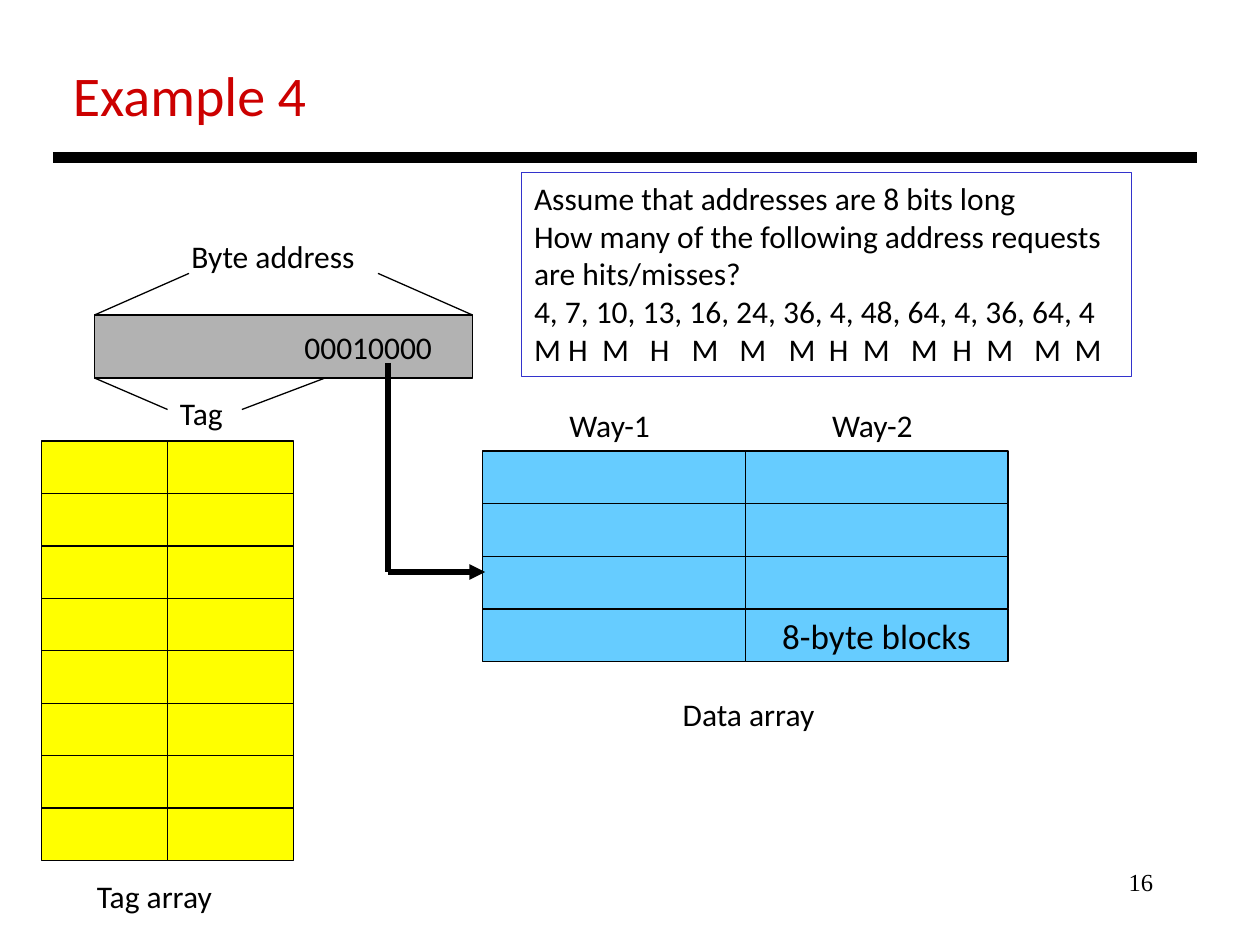
from lxml.etree import SubElement
from pptx import Presentation
from pptx.dml.color import RGBColor
from pptx.enum.shapes import MSO_CONNECTOR, MSO_SHAPE
from pptx.enum.text import MSO_ANCHOR, PP_ALIGN
from pptx.oxml.ns import qn
from pptx.util import Inches, Pt

BLACK, RED, BLUE = "000000", "CC0000", "3333CC"
GRAY, YELLOW, SKY = "B2B2B2", "FFFF00", "66CCFF"
QUIZ = [
    "Assume that addresses are 8 bits long",
    "How many of the following address requests",
    "are hits/misses?",
    "4, 7, 10, 13, 16, 24, 36, 4, 48, 64, 4, 36, 64, 4",
    "\t".join("MHMHMMMHMMHMMM"),
]
STOPS = [0.27, 0.54, 0.92, 1.25, 1.63, 2.02, 2.34, 2.61, 2.99, 3.32, 3.59, 3.97, 4.29]


def color(code):
    return RGBColor.from_string(code)


def write(shape, text, size=18, font="Calibri", ink=BLACK, align=PP_ALIGN.LEFT, wrap=False):
    frame = shape.text_frame
    frame.text = text
    frame.word_wrap = wrap
    for para in frame.paragraphs:
        para.alignment = align
        for run in para.runs:
            run.font.size = Pt(size)
            run.font.name = font
            run.font.color.rgb = color(ink)
    return frame


def label(slide, text, x, y, w, h=0.4, **style):
    box = slide.shapes.add_textbox(Inches(x), Inches(y), Inches(w), Inches(h))
    write(box, text, **style)


def rect(slide, x, y, w, h, fill=None, edge=BLACK):
    box = slide.shapes.add_shape(
        MSO_SHAPE.RECTANGLE, Inches(x), Inches(y), Inches(w), Inches(h))
    box.shadow.inherit = False
    if fill:
        box.fill.solid()
        box.fill.fore_color.rgb = color(fill)
    else:
        box.fill.background()
    box.line.color.rgb = color(edge)
    box.line.width = Pt(0.75)
    return box


def line(slide, x1, y1, x2, y2, width=0.75, arrow=False):
    link = slide.shapes.add_connector(
        MSO_CONNECTOR.STRAIGHT, Inches(x1), Inches(y1), Inches(x2), Inches(y2))
    link.line.color.rgb = color(BLACK)
    link.line.width = Pt(width)
    if arrow:
        SubElement(link.line._get_or_add_ln(), qn("a:tailEnd"), type="triangle")
    SubElement(link._element.spPr, qn("a:effectLst"))


def grid(slide, x, y, w, h, rows, cols, fill):
    """Draw equal cells and return them row by row."""
    wide, high = w / cols, h / rows
    return [rect(slide, x + col * wide, y + row * high, wide, high, fill)
            for row in range(rows) for col in range(cols)]


def header(slide, x, y, w):
    label(slide, "Example 4", x + 0.06, y, 2.07, 0.64, size=32, ink=RED)
    line(slide, x, y + 0.82, x + w, y + 0.82, width=6)


def address(slide, x, y, w, h):
    """Draw the address bar with its braces above and below."""
    bar = rect(slide, x, y, w, h, GRAY)
    frame = write(bar, "00010000", align=PP_ALIGN.RIGHT)
    frame.vertical_anchor = MSO_ANCHOR.MIDDLE
    frame.margin_right = Inches(0.32)
    label(slide, "Byte address", x + 0.67, y - 0.67, 1.51)
    line(slide, x + 0.75, y - 0.33, x, y)
    line(slide, x + w - 0.75, y - 0.33, x + w, y)
    label(slide, "Tag", x + 0.58, y + h + 0.08, 0.55)
    line(slide, x, y + h, x + 0.58, y + h + 0.25)
    line(slide, x + 1.17, y + h + 0.25, x + 1.83, y + h)


def tags(slide, x, y, w, h):
    grid(slide, x, y, w, h, 8, 2, YELLOW)
    label(slide, "Tag array", x + 0.34, y + h + 0.08, 1.12)


def data(slide, x, y, w, h):
    cells = grid(slide, x, y, w, h, 4, 2, SKY)
    frame = write(cells[-1], "8-byte blocks", size=20, align=PP_ALIGN.CENTER)
    frame.vertical_anchor = MSO_ANCHOR.MIDDLE
    for way in range(2):
        label(slide, f"Way-{way + 1}", x + 0.59 + way * w / 2, y - 0.41, 0.85)
    label(slide, "Data array", x + 1.49, y + h + 0.22, 1.26)


def index(slide, x, y, w, h):
    """Lead from the index bits down and across to the selected set."""
    line(slide, x, y, x, y + h, width=3)
    line(slide, x, y + h, x + w, y + h, width=3, arrow=True)


def quiz(slide, x, y, w, h):
    box = rect(slide, x, y, w, h, edge=BLUE)
    frame = write(box, "\n".join(QUIZ), wrap=True)
    frame.vertical_anchor = MSO_ANCHOR.TOP
    props = frame.paragraphs[-1]._p.get_or_add_pPr()
    tabs = SubElement(props, qn("a:tabLst"))
    for stop in STOPS:
        SubElement(tabs, qn("a:tab"), pos=str(Inches(stop)), algn="l")


def main():
    deck = Presentation()
    deck.slide_width, deck.slide_height = Inches(10), Inches(7.5)
    slide = deck.slides.add_slide(deck.slide_layouts[6])
    header(slide, 0.42, 0.43, 9.08)
    address(slide, 0.75, 2.5, 3, 0.5)
    tags(slide, 0.33, 3.5, 2, 3.33)
    data(slide, 3.83, 3.58, 4.17, 1.67)
    index(slide, 3.08, 2.88, 0.77, 1.66)
    quiz(slide, 4.14, 1.37, 4.84, 1.62)
    label(slide, "16", 7.17, 6.83, 2.08, 0.5, size=14,
          font="Times New Roman", align=PP_ALIGN.RIGHT, wrap=True)
    deck.save("out.pptx")


if __name__ == "__main__":
    main()
